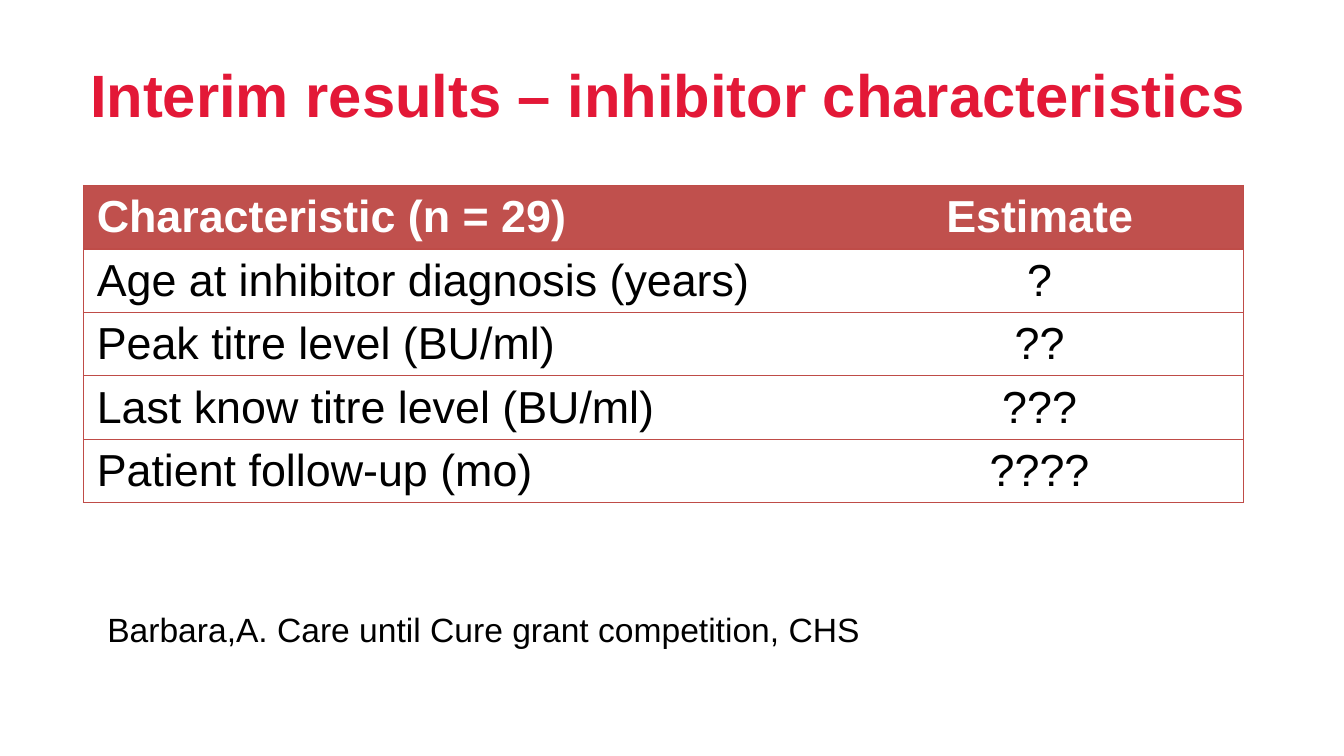
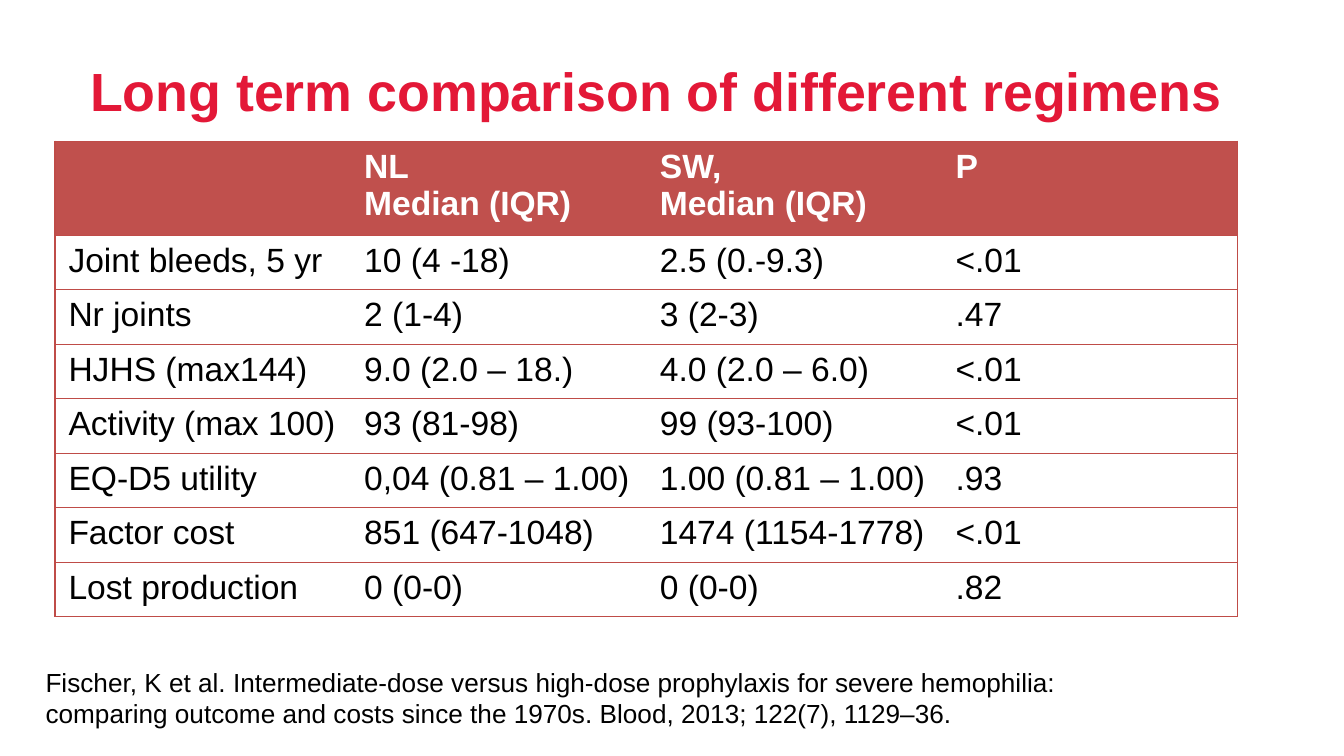
"""Build two slides of hemophilia study results, each with a title, a table and a source."""
from lxml.etree import SubElement
from pptx import Presentation
from pptx.dml.color import RGBColor
from pptx.enum.text import MSO_ANCHOR as Anchor, MSO_AUTO_SIZE as AutoSize, PP_ALIGN as Align
from pptx.oxml.ns import qn
from pptx.util import Inches, Pt

THEME = {
    "font": "Arial",
    "title": "E31837",
    "header": "C0504D",
    "border": "BF4C48",
    "light": "FFFFFF",
    "dark": "000000",
    "border_width": Pt(0.75),
    "title_sizes": [32, 28.8],
    "table_sizes": [24, 18],
    "source_sizes": [18, 14],
}

SLIDES = [
    {
        "title": "Interim results – inhibitor characteristics",
        "table_place": (0.62, 1.38),
        "columns": [5.6, 3.03],
        "header_height": 0.47,
        "body_height": 1.89,
        "alignments": [Align.LEFT, Align.CENTER],
        "rows": [
            ["Characteristic (n = 29)", "Estimate"],
            ["Age at inhibitor diagnosis (years)", "?"],
            ["Peak titre level (BU/ml)", "??"],
            ["Last know titre level (BU/ml)", "???"],
            ["Patient follow-up (mo)", "????"],
        ],
        "source": "Barbara,A. Care until Cure grant competition, CHS",
        "source_place": (0.7, 4.48, 5.98, 0.4),
        "source_wrap": False,
    },
    {
        "title": "Long term comparison of different regimens",
        "table_place": (0.41, 1.05),
        "columns": [2.2] * 4,
        "header_height": 0.7,
        "body_height": 2.84,
        "alignments": [Align.LEFT] * 4,
        "rows": [
            ["", "NL\nMedian (IQR)", "SW,\nMedian (IQR)", "P"],
            ["Joint bleeds, 5 yr", "10 (4 -18)", "2.5 (0.-9.3)", "<.01"],
            ["Nr joints", "2 (1-4)", "3 (2-3)", ".47"],
            ["HJHS (max144)", "9.0 (2.0 – 18.)", "4.0 (2.0 – 6.0)", "<.01"],
            ["Activity (max 100)", "93 (81-98)", "99 (93-100)", "<.01"],
            ["EQ-D5 utility", "0,04 (0.81 – 1.00)", "1.00 (0.81 – 1.00)", ".93"],
            ["Factor cost", "851 (647-1048)", "1474 (1154-1778)", "<.01"],
            ["Lost production", "0 (0-0)", "0 (0-0)", ".82"],
        ],
        "source": "Fischer, K et al. Intermediate-dose versus high-dose prophylaxis for severe "
                  "hemophilia: comparing outcome and costs since the 1970s. "
                  "Blood, 2013; 122(7), 1129–36.",
        "source_place": (0.24, 4.91, 7.89, 0.57),
        "source_wrap": True,
    },
]


def write_text(frame, text, size, color, bold=False, alignment=Align.LEFT):
    frame.text = text
    for paragraph in frame.paragraphs:
        paragraph.alignment = alignment
        for run in paragraph.runs:
            formats = {"name": THEME["font"], "size": Pt(size), "bold": bold}
            for name, value in formats.items():
                setattr(run.font, name, value)
            run.font.color.rgb = RGBColor.from_string(color)


def set_borders(cell, visible_sides):
    properties = cell._tc.get_or_add_tcPr()
    for side in "LRTB":
        line = SubElement(properties, qn(f"a:ln{side}"), w=str(THEME["border_width"]))
        if side in visible_sides:
            fill = SubElement(line, qn("a:solidFill"))
            SubElement(fill, qn("a:srgbClr"), val=THEME["border"])
        else:
            SubElement(line, qn("a:noFill"))


presentation = Presentation()
presentation.slide_width = Inches(10)
presentation.slide_height = Inches(10 * 9 / 16)
title_only = presentation.slide_layouts[5]

for number, content in enumerate(SLIDES):
    slide = presentation.slides.add_slide(title_only)

    title = slide.shapes.title
    title_place = {"left": 0.67, "top": 0.43, "width": 8.85, "height": 0.67}
    for name, value in title_place.items():
        setattr(title, name, Inches(value))
    title_format = {
        "margin_left": 0, "margin_right": 0, "margin_top": 0, "margin_bottom": 0,
        "vertical_anchor": Anchor.TOP, "auto_size": AutoSize.NONE, "word_wrap": True,
    }
    for name, value in title_format.items():
        setattr(title.text_frame, name, value)
    write_text(title.text_frame, content["title"], THEME["title_sizes"][number],
               THEME["title"], True)

    rows, columns = content["rows"], content["columns"]
    body_rows = len(rows) - 1
    heights = [content["header_height"]] + [content["body_height"] / body_rows] * body_rows
    left, top = content["table_place"]
    table = slide.shapes.add_table(
        len(rows), len(columns), Inches(left), Inches(top),
        Inches(sum(columns)), Inches(sum(heights)),
    ).table
    table.horz_banding = False
    for column, width in zip(table.columns, columns):
        column.width = Inches(width)
    for row_number, (row, height) in enumerate(zip(rows, heights)):
        table.rows[row_number].height = Inches(height)
        is_header = row_number == 0
        for column_number, text in enumerate(row):
            cell = table.cell(row_number, column_number)
            sides = "TB"
            if column_number == 0:
                sides += "L"
            if column_number == len(columns) - 1:
                sides += "R"
            set_borders(cell, sides)
            if is_header:
                cell.fill.solid()
                cell.fill.fore_color.rgb = RGBColor.from_string(THEME["header"])
            else:
                cell.fill.background()
            color = THEME["light"] if is_header else THEME["dark"]
            write_text(cell.text_frame, text, THEME["table_sizes"][number], color, is_header,
                       content["alignments"][column_number])

    source = slide.shapes.add_textbox(*map(Inches, content["source_place"]))
    source.text_frame.word_wrap = content["source_wrap"]
    source.text_frame.auto_size = AutoSize.SHAPE_TO_FIT_TEXT
    write_text(source.text_frame, content["source"], THEME["source_sizes"][number], THEME["dark"])

presentation.save("out.pptx")
